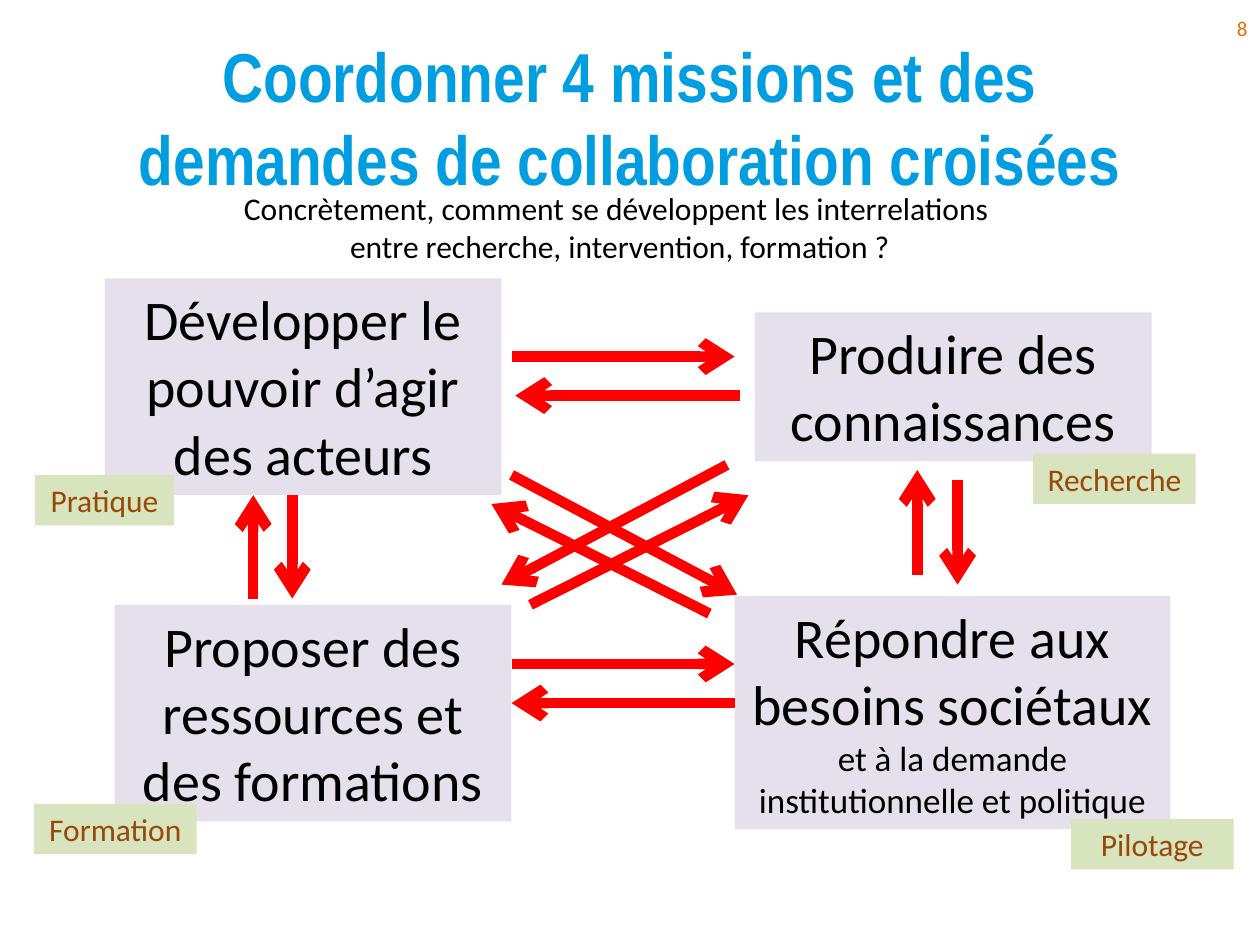
import pptx
import pptx.util
import pptx.dml.color
import pptx.enum.text
import pptx.enum.shapes
import pptx.oxml.ns
import lxml.etree

Inches = pptx.util.Inches
ALIGN = pptx.enum.text.PP_ALIGN
ANCHOR = pptx.enum.text.MSO_ANCHOR
GROW = pptx.enum.text.MSO_AUTO_SIZE.SHAPE_TO_FIT_TEXT

MISSIONS = [
    ((0.83, 2.21, 3.15, 1.72), [("Développer le pouvoir d’agir des acteurs", 32)]),
    ((5.99, 2.48, 3.15, 1.18), [("Produire des connaissances", 32)]),
    ((5.83, 4.73, 3.46, 1.85), [
        ("Répondre aux besoins sociétaux ", 32),
        ("et à la demande institutionnelle et politique", 20),
    ]),
    ((0.91, 4.8, 3.15, 1.72), [("Proposer des ressources et des formations", 32)]),
]

DOMAINS = [
    ("Pratique", 0.28, 3.77, 1.1),
    ("Recherche", 8.2, 3.6, 1.29),
    ("Formation", 0.27, 6.38, 1.29),
    ("Pilotage", 8.5, 6.5, 1.29),
]

EXCHANGES = [
    ((4.06, 2.83), (5.83, 2.83)),
    ((5.87, 3.14), (4.09, 3.14)),
    ((4.06, 5.27), (5.83, 5.27)),
    ((5.83, 5.58), (4.06, 5.58)),
    ((2.01, 4.75), (2.01, 3.93)),
    ((2.32, 3.93), (2.32, 4.75)),
    ((7.28, 4.56), (7.28, 3.73)),
    ((7.6, 3.81), (7.6, 4.64)),
    ((5.63, 4.87), (3.9, 4)),
    ((4.06, 3.77), (5.85, 4.72)),
    ((4.21, 4.8), (5.94, 3.93)),
    ((5.77, 3.69), (3.98, 4.64)),
]


def rgb(value):
    return pptx.dml.color.RGBColor.from_string(value)


def apply_format(target, values):
    for name, value in values.items():
        setattr(target, name, value)


def write_text(holder, paragraphs, color, frame_format, font_format, align=ALIGN.CENTER):
    frame = holder.text_frame
    apply_format(frame, {"word_wrap": True, **frame_format})
    for index, runs in enumerate(paragraphs):
        paragraph = frame.add_paragraph() if index else frame.paragraphs[0]
        paragraph.alignment = align
        for words, size in runs:
            run = paragraph.add_run()
            run.text = words
            apply_format(run.font, {"size": pptx.util.Pt(size), **font_format})
            run.font.color.rgb = rgb(color)


def add_caption(slide, place, paragraphs, color, frame_format, font_format, align=ALIGN.CENTER):
    caption = slide.shapes.add_textbox(*map(Inches, place))
    write_text(caption, paragraphs, color, frame_format, font_format, align)


def add_panel(slide, place, runs, fill, color):
    panel = slide.shapes.add_shape(
        pptx.enum.shapes.MSO_SHAPE.RECTANGLE, *map(Inches, place))
    panel.shadow.inherit = False
    panel.fill.solid()
    panel.fill.fore_color.rgb = rgb(fill)
    panel.line.fill.background()
    frame_format = {"vertical_anchor": ANCHOR.TOP, "auto_size": GROW}
    write_text(panel, [runs], color, frame_format, {"name": "Calibri"})


def add_arrow(slide, start, end):
    arrow = slide.shapes.add_connector(
        pptx.enum.shapes.MSO_CONNECTOR.STRAIGHT, *map(Inches, start + end))
    arrow.line.color.rgb = rgb("FF0000")
    arrow.line.width = pptx.util.Pt(6)
    qn = pptx.oxml.ns.qn
    properties = arrow.element.spPr
    outline = properties.find(qn("a:ln"))
    lxml.etree.SubElement(outline, qn("a:tailEnd"), type="arrow")
    lxml.etree.SubElement(properties, qn("a:effectLst"))


def main():
    deck = pptx.Presentation()
    apply_format(deck, {"slide_width": Inches(10), "slide_height": Inches(7.5)})
    slide = deck.slides.add_slide(deck.slide_layouts[6])

    middle = {"vertical_anchor": ANCHOR.MIDDLE}
    add_caption(
        slide, (0.5, 0.3, 9, 1.25),
        [[("Coordonner 4 missions et des demandes de collaboration croisées", 39.6)]],
        "009EE0", middle, {"name": "Arial Narrow", "bold": True})
    add_caption(slide, (7.67, 0.02, 2.33, 0.4), [[("8", 12)]],
                "E46C0A", middle, {"name": "Calibri"}, ALIGN.RIGHT)

    for place, runs in MISSIONS:
        add_panel(slide, place, runs, "E6E0EC", "000000")
    for start, end in EXCHANGES:
        add_arrow(slide, start, end)

    add_caption(
        slide, (0.43, 1.45, 8.98, 0.71),
        [[("Concrètement, comment se développent les interrelations ", 18)],
         [("entre recherche, intervention, formation ?", 18)]],
        "000000", {"auto_size": GROW}, {"name": "Calibri"})

    for domain, left, top, width in DOMAINS:
        add_panel(slide, (left, top, width, 0.4), [(domain, 18)], "D7E4BD", "984807")

    deck.save("out.pptx")


if __name__ == "__main__":
    main()
